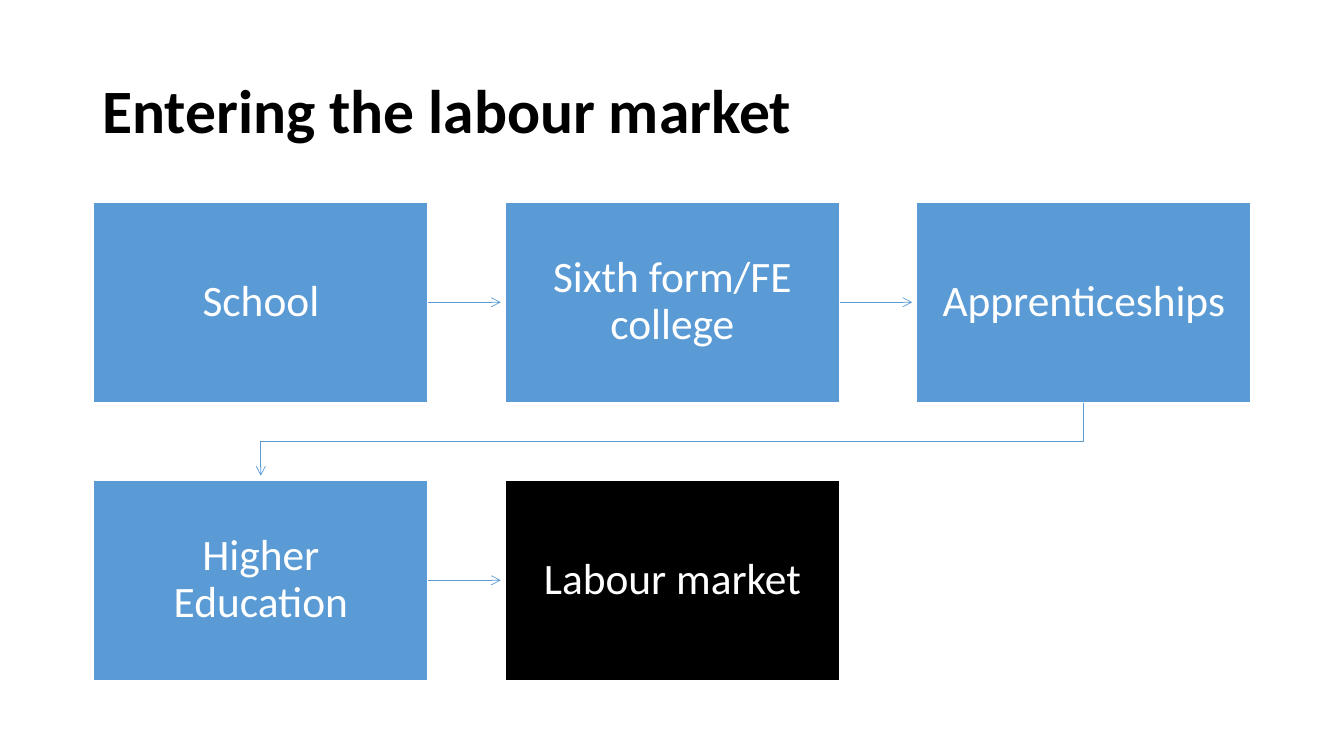
from lxml import etree
from pptx import Presentation
from pptx.dml.color import RGBColor
from pptx.enum import shapes, text
from pptx.oxml.ns import qn
from pptx.util import Pt

BLUE = RGBColor(0x5B, 0x9B, 0xD5)
BLACK = RGBColor(0, 0, 0)
WHITE = RGBColor(255, 255, 255)

STAGES = ["School", "Sixth form/FE college", "Apprenticeships",
          "Higher Education", "Labour market"]
COLUMNS = 3
BOX_WIDTH, BOX_HEIGHT = 239, 143.4
ARROW_GAP = 3


def write_text(shape, content, size, color, bold=False,
               align=text.PP_ALIGN.LEFT, inset=None):
    frame = shape.text_frame
    frame.word_wrap = True
    frame.vertical_anchor = text.MSO_ANCHOR.MIDDLE
    if inset is not None:
        frame.margin_left = frame.margin_right = Pt(inset)
        frame.margin_top = frame.margin_bottom = Pt(inset)
    paragraph = frame.paragraphs[0]
    paragraph.alignment = align
    paragraph.line_spacing = 0.9
    run = paragraph.add_run()
    run.text = content
    run.font.name = "Calibri"
    run.font.size = Pt(size)
    run.font.bold = bold
    run.font.color.rgb = color


def style_arrow(arrow):
    arrow.line.color.rgb = BLUE
    arrow.line.width = Pt(0.5)
    properties = arrow.element.spPr
    etree.SubElement(properties.find(qn("a:ln")), qn("a:tailEnd"), type="arrow")
    if properties.find(qn("a:effectLst")) is None:
        etree.SubElement(properties, qn("a:effectLst"))


def add_title(slide, left, top, width, height):
    title = slide.shapes.add_textbox(Pt(left), Pt(top), Pt(width), Pt(height))
    write_text(title, "Entering the labour market", 44, BLACK, bold=True)


def add_stage(slide, label, left, top, fill):
    stage = slide.shapes.add_shape(shapes.MSO_SHAPE.RECTANGLE, Pt(left), Pt(top),
                                   Pt(BOX_WIDTH), Pt(BOX_HEIGHT))
    stage.shadow.inherit = False
    stage.fill.solid()
    stage.fill.fore_color.rgb = fill
    stage.line.color.rgb = WHITE
    stage.line.width = Pt(1)
    write_text(stage, label, 31, WHITE, align=text.PP_ALIGN.CENTER, inset=17)
    return stage


def add_straight_arrow(slide, source, target):
    middle = source.top + source.height // 2
    arrow = slide.shapes.add_connector(
        shapes.MSO_CONNECTOR.STRAIGHT, source.left + source.width, middle,
        target.left - Pt(ARROW_GAP), middle)
    arrow.begin_connect(source, 3)
    style_arrow(arrow)


def add_return_arrow(slide, source, target):
    start_x = source.left + source.width // 2
    end_x = target.left + target.width // 2
    start_y = source.top + source.height
    turn_y = (start_y + target.top) // 2
    builder = slide.shapes.build_freeform(start_x, start_y)
    builder.add_line_segments([(start_x, turn_y), (end_x, turn_y),
                               (end_x, target.top - Pt(ARROW_GAP))], close=False)
    arrow = builder.convert_to_shape()
    arrow.shadow.inherit = False
    arrow.fill.background()
    style_arrow(arrow)


def add_flow(slide, left, top, width, height):
    column_step = (width - BOX_WIDTH) / (COLUMNS - 1)
    row_step = height - BOX_HEIGHT
    stages = []
    for index, label in enumerate(STAGES):
        row, column = divmod(index, COLUMNS)
        fill = BLACK if label == STAGES[-1] else BLUE
        stages.append(add_stage(slide, label, left + column * column_step,
                                top + row * row_step, fill))
    for source, target in zip(stages, stages[1:]):
        if source.top == target.top:
            add_straight_arrow(slide, source, target)
        else:
            add_return_arrow(slide, source, target)


def main():
    presentation = Presentation()
    presentation.slide_width = Pt(960)
    presentation.slide_height = Pt(540)
    slide = presentation.slides.add_slide(presentation.slide_layouts[6])
    add_title(slide, 66, 28.75, 828, 104.4)
    add_flow(slide, 66.8, 144.2, 826.8, 342)
    presentation.save("out.pptx")


if __name__ == "__main__":
    main()
